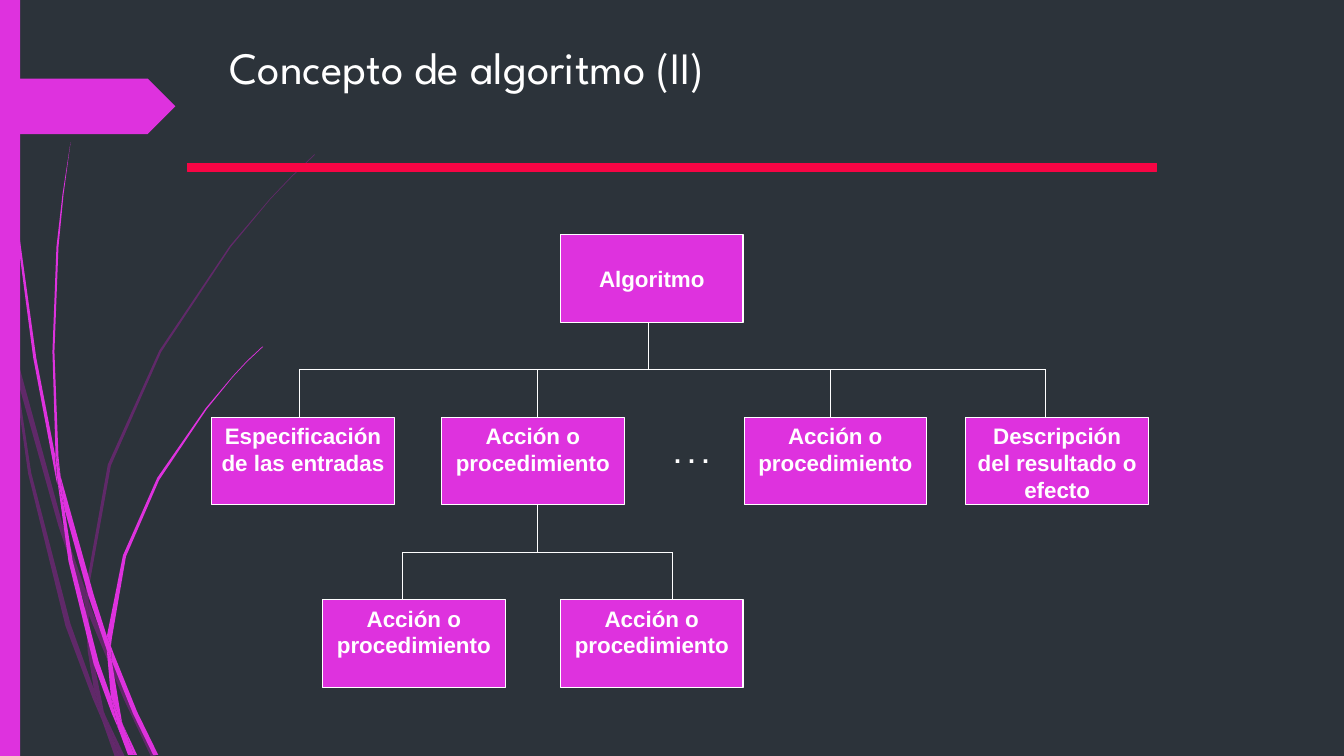
from lxml import etree
from pptx import Presentation
from pptx.dml.color import RGBColor
from pptx.enum.shapes import MSO_CONNECTOR, MSO_SHAPE
from pptx.enum.text import MSO_ANCHOR, PP_ALIGN
from pptx.oxml.ns import qn
from pptx.util import Pt

PX = 9144  # 100 px to the inch
BACKDROP = RGBColor(0x2C, 0x33, 0x3A)
MAGENTA = RGBColor(0xDE, 0x32, 0xDE)
PURPLE = RGBColor(0xB0, 0x1C, 0xB0)
RED = RGBColor(0xF7, 0x05, 0x44)
WHITE = RGBColor(0xFF, 0xFF, 0xFF)


def write(shape, text, size=16, font="Arial", bold=True, align=PP_ALIGN.CENTER,
          anchor=MSO_ANCHOR.TOP, side=9, top=5):
    frame = shape.text_frame
    frame.word_wrap = True
    frame.vertical_anchor = anchor
    frame.margin_left = frame.margin_right = side * PX
    frame.margin_top, frame.margin_bottom = top * PX, 5 * PX
    paragraph = frame.paragraphs[0]
    paragraph.alignment = align
    run = paragraph.add_run()
    run.text = text
    run.font.size, run.font.name, run.font.bold = Pt(size), font, bold
    run.font.color.rgb = WHITE


def paint(shape, color, outline=None):
    shape.shadow.inherit = False
    shape.fill.solid()
    shape.fill.fore_color.rgb = color
    if outline is None:
        shape.line.fill.background()
    else:
        shape.line.color.rgb = outline
        shape.line.width = Pt(0.75)


prs = Presentation()
prs.slide_width, prs.slide_height = 1333 * PX, 750 * PX
slide = prs.slides.add_slide(prs.slide_layouts[6])
slide.background.fill.solid()
slide.background.fill.fore_color.rgb = BACKDROP
shapes = slide.shapes

# Grass blades, each made of a few slivers given by their corners
faded_slivers = [
    [(11, 350), (9, 322), (0, 282), (0, 299), (10, 344)],
    [(58, 522), (84, 599), (85, 586), (62, 520), (14, 345), (17, 376)],
    [(92, 607), (88, 596), (88, 610), (123, 694), (150, 751), (155, 751), (127, 692)],
    [(119, 751), (124, 751), (105, 711)],
    [(93, 683), (70, 619), (31, 469), (17, 376), (11, 350), (28, 470), (65, 621),
     (92, 693), (101, 714), (99, 707)],
    [(84, 599), (87, 646), (93, 683), (96, 692), (105, 711), (103, 706), (91, 646),
     (88, 610), (88, 608)],
    [(88, 584), (110, 462), (160, 349), (229, 245), (268, 198), (290, 175), (312, 154),
     (312, 153), (289, 175), (268, 197), (228, 244), (158, 348), (107, 461), (85, 584),
     (85, 586), (88, 596)],
    [(101, 714), (114, 751), (119, 751)],
    [(88, 608), (88, 610), (88, 596), (85, 586), (84, 599)],
    [(96, 692), (93, 683), (99, 707), (101, 714), (119, 751), (105, 711)],
]
bright_slivers = [
    [(7, 110), (17, 233), (33, 355), (56, 477), (57, 481), (55, 457), (55, 453),
     (36, 355), (19, 232), (8, 109), (5, 48), (4, 0), (3, 0), (4, 48)],
    [(88, 592), (106, 645), (106, 633), (106, 631), (93, 590), (60, 472), (64, 505)],
    [(113, 649), (110, 641), (111, 656), (132, 708), (152, 749), (157, 749), (136, 706)],
    [(110, 691), (98, 657), (72, 556), (64, 505), (57, 477), (68, 557), (93, 659),
     (111, 708), (117, 722), (116, 717)],
    [(60, 472), (58, 453), (54, 349), (58, 245), (63, 193), (70, 141), (62, 193),
     (56, 245), (52, 349), (55, 449)],
    [(133, 749), (136, 749), (122, 719)],
    [(57, 477), (64, 505), (60, 472), (55, 449), (55, 453)],
    [(111, 633), (125, 552), (158, 476), (205, 406), (231, 374), (245, 359), (261, 344),
     (260, 344), (245, 358), (231, 373), (204, 405), (156, 474), (122, 551), (106, 631),
     (110, 641)],
    [(117, 722), (127, 749), (131, 749)],
    [(106, 645), (110, 691), (116, 706), (122, 719), (121, 716), (111, 656), (109, 651)],
    [(106, 645), (109, 651), (111, 656), (110, 641), (106, 631), (106, 633)],
    [(116, 706), (110, 691), (116, 717), (117, 722), (130, 749), (133, 749), (122, 719)],
]
for color, opacity, slivers in [(PURPLE, 40, faded_slivers), (MAGENTA, 100, bright_slivers)]:
    for corners in slivers:
        builder = shapes.build_freeform(*corners[0], scale=PX)
        builder.add_line_segments(corners[1:], close=True)
        sliver = builder.convert_to_shape()
        paint(sliver, color)
        if opacity < 100:
            tint = sliver.fill._xPr.find(".//" + qn("a:srgbClr"))
            etree.SubElement(tint, qn("a:alpha"), val=str(opacity * 1000))

# Side band, page arrow and title rule
for kind, color, outline, *box in [
    (MSO_SHAPE.RECTANGLE, MAGENTA, None, 0, 0, 20, 750),
    (MSO_SHAPE.PENTAGON, MAGENTA, None, 0, 78, 174, 55),
    (MSO_SHAPE.RECTANGLE, RED, RED, 186, 162, 961, 8),
]:
    paint(shapes.add_shape(kind, *(n * PX for n in box)), color, outline)

title = shapes.add_textbox(218 * PX, 28 * PX, 906 * PX, 118 * PX)
write(title, "Concepto de algoritmo (II)", size=32, font="League Spartan",
      bold=False, align=PP_ALIGN.LEFT, side=10, top=11)

# Tree boxes
action = "Acción o procedimiento"
for x, y, label, anchor in [
    (556, 233, "Algoritmo", MSO_ANCHOR.MIDDLE),
    (210, 414, "Especificación de las entradas", MSO_ANCHOR.TOP),
    (438, 414, action, MSO_ANCHOR.TOP),
    (738, 414, action, MSO_ANCHOR.TOP),
    (958, 414, "Descripción del resultado o efecto", MSO_ANCHOR.TOP),
    (320, 595, action, MSO_ANCHOR.TOP),
    (556, 595, action, MSO_ANCHOR.TOP),
]:
    node = shapes.add_shape(MSO_SHAPE.RECTANGLE, x * PX, y * PX, 181 * PX, 87 * PX)
    paint(node, MAGENTA, WHITE)
    write(node, label, anchor=anchor)

ellipsis = shapes.add_textbox(635 * PX, 430 * PX, 102 * PX, 40 * PX)
write(ellipsis, ". . .", size=18)

# Branches: a trunk, a crossbar and one drop for each child
DROP = 47
for trunk_x, top, child_xs in [(643, 320, [297, 533, 824, 1037]),
                               (533, 501, [399, 667])]:
    bar = top + DROP
    branches = [(trunk_x, top, trunk_x, bar), (child_xs[0], bar, child_xs[-1], bar)]
    branches += [(x, bar, x, bar + DROP) for x in child_xs]
    for ends in branches:
        branch = shapes.add_connector(MSO_CONNECTOR.STRAIGHT, *(n * PX for n in ends))
        branch.line.color.rgb = WHITE
        branch.line.width = Pt(0.75)
        etree.SubElement(branch._element.spPr, qn("a:effectLst"))

prs.save("out.pptx")
